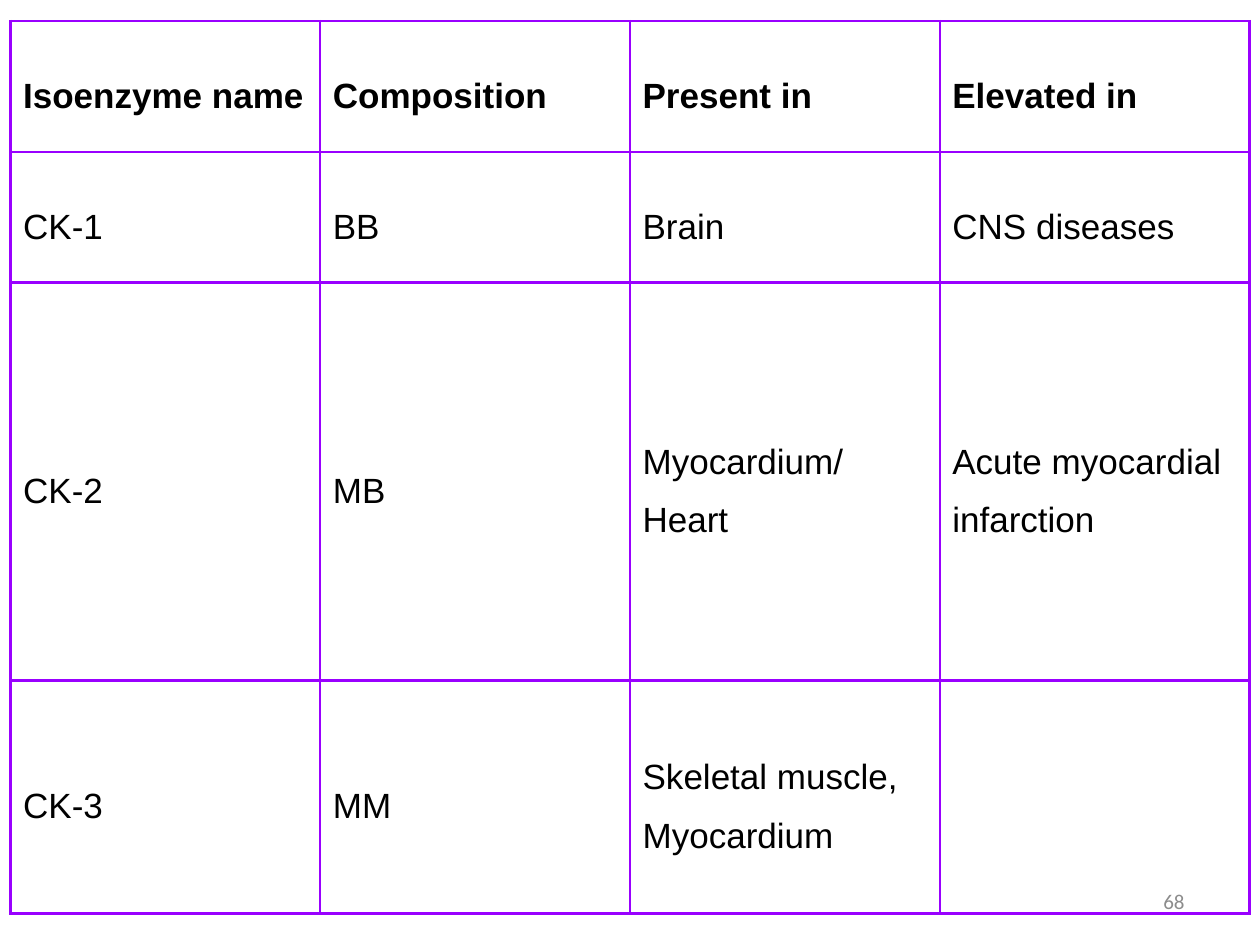
from lxml import etree
from pptx import Presentation
from pptx import util as u
from pptx.dml.color import RGBColor
from pptx.enum import text
from pptx.oxml.ns import qn

# Content
ROWS = [
    ("Isoenzyme name", "Composition", "Present in", "Elevated in"),
    ("CK-1", "BB", "Brain", "CNS diseases"),
    ("CK-2", "MB", "Myocardium/ Heart", "Acute myocardial infarction"),
    ("CK-3", "MM", "Skeletal muscle, Myocardium", ""),
]
PAGE = "68"

# Layout and formats, in points
LEFT, TOP, WIDTH = 6, 12, 708
HIGH = [74.7, 74.7, 227.5, 133.1]
EDGE = 1.5
BLACK = RGBColor(0, 0, 0)
GREY = RGBColor(0x8C, 0x8C, 0x8C)
VIOLET = RGBColor(0x99, 0x00, 0xFF)
BODY = {"name": "Arial", "size": u.Pt(20), "bold": False}
HEAD = {**BODY, "bold": True}
FOOT = {"name": "Calibri", "size": u.Pt(12)}


def style(font, form, color):
    for key, val in form.items():
        setattr(font, key, val)
    font.color.rgb = color


def border(cell):
    props = cell._tc.get_or_add_tcPr()
    for pos, side in enumerate(("lnL", "lnR", "lnT", "lnB")):
        line = etree.Element(qn("a:" + side), w=str(u.Pt(EDGE)))
        fill = etree.SubElement(line, qn("a:solidFill"))
        etree.SubElement(fill, qn("a:srgbClr"), val=str(VIOLET))
        props.insert(pos, line)


def write(cell, words, form):
    cell.fill.background()
    cell.vertical_anchor = text.MSO_ANCHOR.MIDDLE
    border(cell)
    para = cell.text_frame.paragraphs[0]
    para.line_spacing = 1.5
    style(para.font, form, BLACK)
    if words:
        run = para.add_run()
        run.text = words
        style(run.font, form, BLACK)


def main():
    prs = Presentation()
    prs.slide_width, prs.slide_height = u.Pt(720), u.Pt(540)
    slide = prs.slides.add_slide(prs.slide_layouts[6])

    # Isoenzyme table
    count = len(ROWS[0])
    table = slide.shapes.add_table(
        len(ROWS), count, u.Pt(LEFT), u.Pt(TOP), u.Pt(WIDTH), u.Pt(sum(HIGH))
    ).table
    table.horz_banding = False
    for col in table.columns:
        col.width = u.Pt(WIDTH / count)
    for r, (row, high) in enumerate(zip(ROWS, HIGH)):
        table.rows[r].height = u.Pt(high)
        for c, words in enumerate(row):
            write(table.cell(r, c), words, BODY if r else HEAD)

    # Page number
    box = slide.shapes.add_textbox(u.Pt(516), u.Pt(500.5), u.Pt(168), u.Pt(28.75))
    frame = box.text_frame
    frame.word_wrap = True
    frame.vertical_anchor = text.MSO_ANCHOR.MIDDLE
    para = frame.paragraphs[0]
    para.alignment = text.PP_ALIGN.RIGHT
    run = para.add_run()
    run.text = PAGE
    style(run.font, FOOT, GREY)

    prs.save("out.pptx")


if __name__ == "__main__":
    main()
